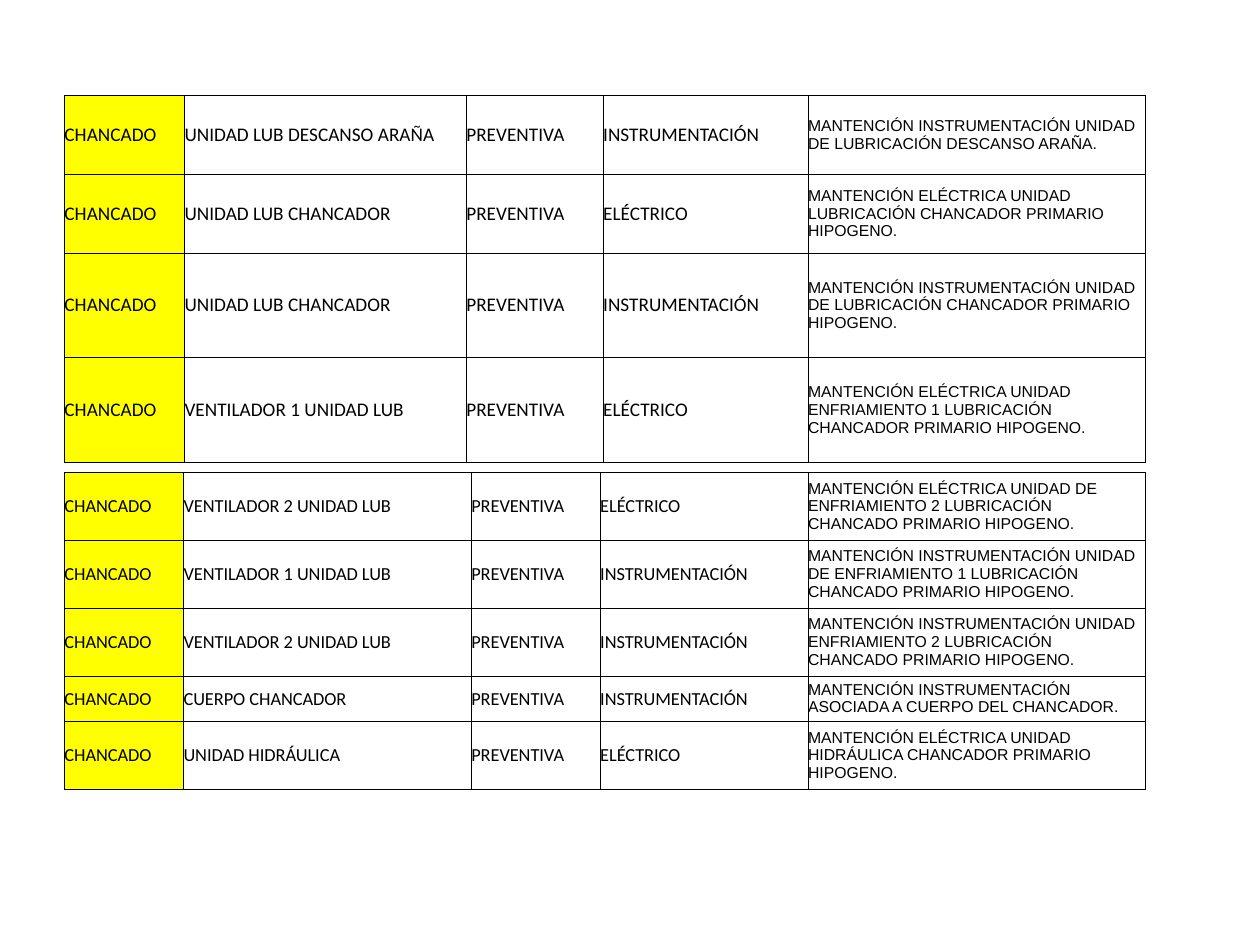
import pptx
import pptx.dml.color
import pptx.enum.text
import pptx.oxml
import pptx.oxml.ns
import pptx.util
from pptx.util import Cm

BLACK = pptx.dml.color.RGBColor(0x00, 0x00, 0x00)
YELLOW = pptx.dml.color.RGBColor(0xFF, 0xFF, 0x00)

AREA = "CHANCADO"
TYPE = "PREVENTIVA"
ELECTRICAL = "ELÉCTRICO"
INSTRUMENTS = "INSTRUMENTACIÓN"

# Equipment, discipline, task
LUBRICATION_TASKS = [
    ("UNIDAD LUB DESCANSO ARAÑA", INSTRUMENTS,
     "MANTENCIÓN INSTRUMENTACIÓN UNIDAD DE LUBRICACIÓN DESCANSO ARAÑA."),
    ("UNIDAD LUB CHANCADOR", ELECTRICAL,
     "MANTENCIÓN ELÉCTRICA UNIDAD LUBRICACIÓN CHANCADOR PRIMARIO HIPOGENO."),
    ("UNIDAD LUB CHANCADOR", INSTRUMENTS,
     "MANTENCIÓN INSTRUMENTACIÓN UNIDAD DE LUBRICACIÓN CHANCADOR PRIMARIO HIPOGENO."),
    ("VENTILADOR 1 UNIDAD LUB", ELECTRICAL,
     "MANTENCIÓN ELÉCTRICA UNIDAD ENFRIAMIENTO 1 LUBRICACIÓN CHANCADOR PRIMARIO HIPOGENO."),
]
COOLING_TASKS = [
    ("VENTILADOR 2 UNIDAD LUB", ELECTRICAL,
     "MANTENCIÓN ELÉCTRICA UNIDAD DE ENFRIAMIENTO 2 LUBRICACIÓN CHANCADO PRIMARIO HIPOGENO."),
    ("VENTILADOR 1 UNIDAD LUB", INSTRUMENTS,
     "MANTENCIÓN INSTRUMENTACIÓN UNIDAD DE ENFRIAMIENTO 1 LUBRICACIÓN CHANCADO PRIMARIO HIPOGENO."),
    ("VENTILADOR 2 UNIDAD LUB", INSTRUMENTS,
     "MANTENCIÓN INSTRUMENTACIÓN UNIDAD ENFRIAMIENTO 2 LUBRICACIÓN CHANCADO PRIMARIO HIPOGENO."),
    ("CUERPO CHANCADOR", INSTRUMENTS,
     "MANTENCIÓN INSTRUMENTACIÓN ASOCIADA A CUERPO DEL CHANCADOR."),
    ("UNIDAD HIDRÁULICA", ELECTRICAL,
     "MANTENCIÓN ELÉCTRICA UNIDAD HIDRÁULICA CHANCADOR PRIMARIO HIPOGENO."),
]


def add_borders(cell):
    properties = cell._tc.get_or_add_tcPr()
    for side in ("lnL", "lnR", "lnT", "lnB"):
        properties.append(pptx.oxml.parse_xml(
            f'<a:{side} {pptx.oxml.ns.nsdecls("a")} w="{pptx.util.Pt(0.5)}">'
            f'<a:solidFill><a:srgbClr val="{BLACK}"/></a:solidFill></a:{side}>'))


def format_cell(cell, text, font_name, font_size, fill_color=None):
    cell.margin_left = cell.margin_right = 0
    cell.margin_top = cell.margin_bottom = 0
    cell.vertical_anchor = pptx.enum.text.MSO_ANCHOR.MIDDLE
    add_borders(cell)
    if fill_color is None:
        cell.fill.background()
    else:
        cell.fill.solid()
        cell.fill.fore_color.rgb = fill_color
    cell.text_frame.text = text
    font = cell.text_frame.paragraphs[0].runs[0].font
    font.name = font_name
    font.size = pptx.util.Pt(font_size)
    font.bold = False
    font.color.rgb = BLACK


def add_task_table(slide, left, top, column_widths, row_heights, tasks, font_size):
    shape = slide.shapes.add_table(
        len(row_heights), len(column_widths), Cm(left), Cm(top),
        Cm(sum(column_widths)), Cm(sum(row_heights)))
    table = shape.table
    table.first_row = table.horz_banding = False
    for column, width in zip(table.columns, column_widths):
        column.width = Cm(width)
    for row, height, (equipment, discipline, task) in zip(table.rows, row_heights, tasks):
        row.height = Cm(height)
        area_cell, *detail_cells, task_cell = row.cells
        format_cell(area_cell, AREA, "Calibri", font_size, YELLOW)
        for cell, text in zip(detail_cells, (equipment, TYPE, discipline)):
            format_cell(cell, text, "Calibri", font_size)
        format_cell(task_cell, task, "Arial", 9)


def main():
    presentation = pptx.Presentation()
    presentation.slide_width = Cm(25.4)
    presentation.slide_height = Cm(19.05)
    slide = presentation.slides.add_slide(presentation.slide_layouts[6])

    # Upper table: lubrication units
    add_task_table(slide, 1.3, 1.93, [2.42, 5.68, 2.76, 4.13, 6.8],
                   [1.59, 1.58, 2.11, 2.11], LUBRICATION_TASKS, 11)
    # Lower table: fans, crusher body and hydraulic unit
    add_task_table(slide, 1.3, 9.52, [2.4, 5.8, 2.6, 4.19, 6.8],
                   [1.37, 1.37, 1.37, 0.91, 1.37], COOLING_TASKS, 10.5)

    presentation.save("out.pptx")


if __name__ == "__main__":
    main()
